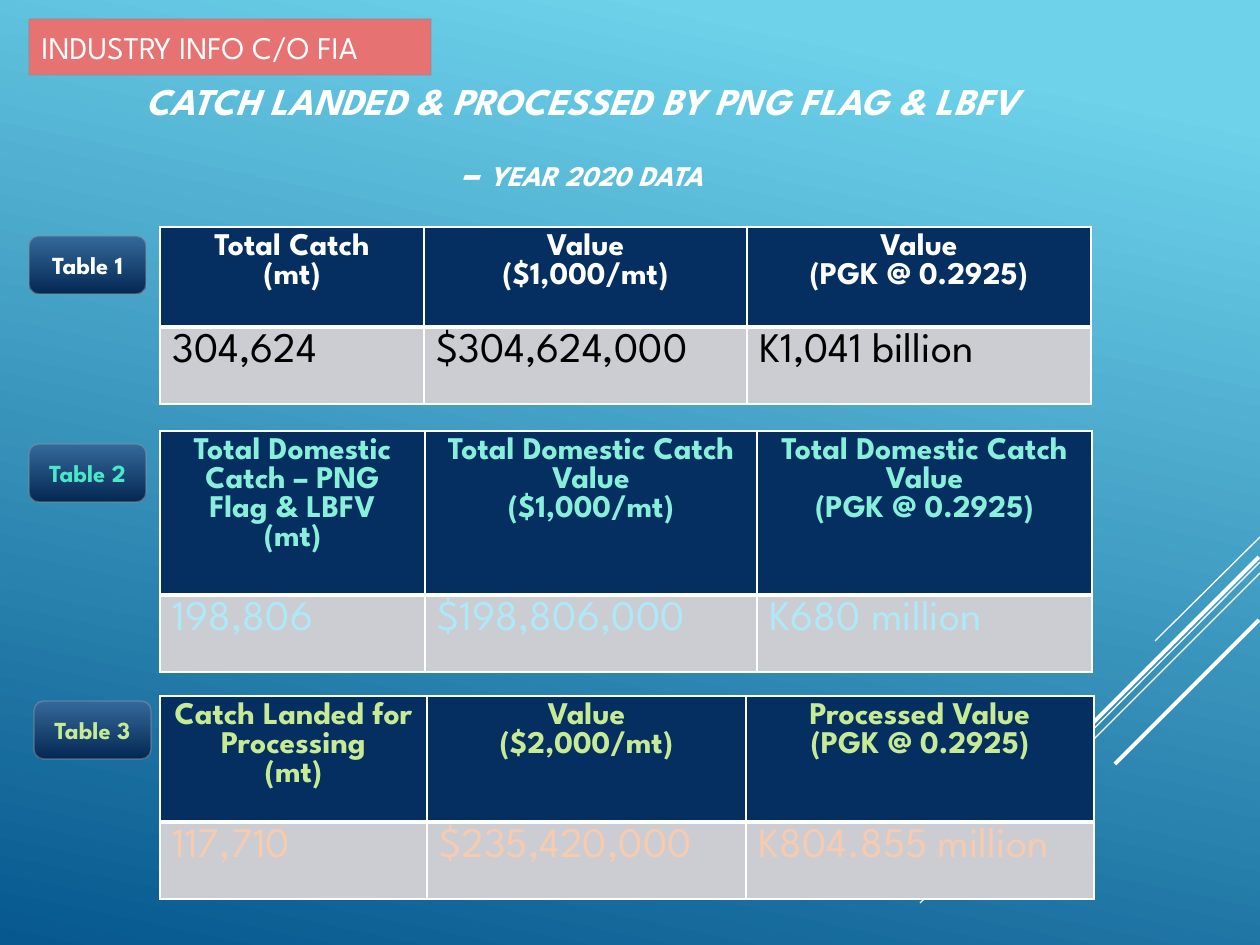
"""Build the slide on catch landed and processed, year 2020."""
from lxml.etree import SubElement
from pptx import Presentation
from pptx.dml.color import RGBColor
from pptx.enum.shapes import MSO_CONNECTOR, MSO_SHAPE
from pptx.enum.text import MSO_ANCHOR, PP_ALIGN
from pptx.oxml.ns import qn
from pptx.util import Emu, Pt

COLORS = {
    "sky": "6ED2EB", "sea": "06588E", "white": "FFFFFF", "black": "000000",
    "navy": "052F61", "grey": "CCCDD2", "coral": "E67272", "edge": "89919C",
    "label_top": "35699B", "label_bottom": "042853", "mint": "87EFDA",
    "teal": "4BE7C8", "ice": "ADE9F8", "lime": "C7EA94", "peach": "F6CBAF",
}
RGB = {name: RGBColor.from_string(value) for name, value in COLORS.items()}
FONT = "League Spartan"


def px(length):
    return Emu(round(length * 914400 / 126))


def write(para, text, size, color, bold=False, italic=False):
    span = para.add_run()
    span.text = text
    span.font.name = FONT
    span.font.size = Pt(size)
    span.font.color.rgb = RGB[color]
    span.font.bold = bold
    span.font.italic = italic


deck = Presentation()
deck.slide_width, deck.slide_height = px(1260), px(945)
page = deck.slides.add_slide(deck.slide_layouts[6])

backdrop = page.background.fill
backdrop.gradient()
backdrop.gradient_angle = 258
for stop, color, position in zip(backdrop.gradient_stops, ("sky", "sea"), (0.1, 1)):
    stop.color.rgb = RGB[color]
    stop.position = position

for x1, y1, x2, y2, weight in [
    (1260, 537, 1155, 641, 0.75),
    (1260, 562, 920, 903, 0.75),
    (1260, 573, 1043, 790, 0.75),
    (1259, 557, 1061, 755, 2.25),
    (1259, 620, 1115, 764, 2.25),
]:
    streak = page.shapes.add_connector(
        MSO_CONNECTOR.STRAIGHT, px(x1), px(y1), px(x2), px(y2))
    streak.line.color.rgb = RGB["white"]
    streak.line.width = Pt(weight)
    SubElement(streak._element.spPr, qn("a:effectLst"))

title = page.shapes.add_textbox(px(34), px(73), px(1096), px(110)).text_frame
title.word_wrap = True
title.vertical_anchor = MSO_ANCHOR.MIDDLE
para = title.paragraphs[0]
para.alignment = PP_ALIGN.CENTER
para.line_spacing = 1.36
write(para, "CATCH LANDED & PROCESSED BY PNG FLAG & LBFV", 21.6, "white", True, True)
para.add_line_break()
write(para, "–", 21.6, "white", True, True)
write(para, " ", 25.2, "white", True, True)
write(para, "YEAR 2020 DATA", 16.2, "white", True, True)

tables = [
    (227, (264, 323, 344), (100, 77), "white", "black",
     [("Total Catch", "(mt)"), ("Value", "($1,000/mt)"), ("Value", "(PGK @ 0.2925)")],
     ["304,624", "$304,624,000", "K1,041 billion"]),
    (431, (265, 332, 335), (128, 77), "mint", "ice",
     [("Total Domestic Catch – PNG Flag & LBFV", "(mt)"),
      ("Total Domestic Catch Value", "($1,000/mt)"),
      ("Total Domestic Catch Value", "(PGK @ 0.2925)")],
     ["198,806", "$198,806,000", "K680 million"]),
    (696, (267, 319, 348), (100, 77), "lime", "peach",
     [("Catch Landed for Processing", "(mt)"), ("Value", "($2,000/mt)"),
      ("Processed Value", "(PGK @ 0.2925)")],
     ["117,710", "$235,420,000", "K804.855 million"]),
]
for top, widths, heights, head_color, body_color, heads, values in tables:
    grid = page.shapes.add_table(
        2, 3, px(160), px(top), px(sum(widths)), px(sum(heights))).table
    for row, height in zip(grid.rows, heights):
        row.height = px(height)
    for index, width in enumerate(widths):
        grid.columns[index].width = px(width)
        head, body = grid.cell(0, index), grid.cell(1, index)
        for number, text in enumerate(heads[index]):
            frame = head.text_frame
            para = frame.add_paragraph() if number else frame.paragraphs[0]
            para.alignment = PP_ALIGN.CENTER
            write(para, text, 18, head_color, bold=True)
        write(body.text_frame.paragraphs[0], values[index], 24, body_color)
        for cell, fill, thick in ((head, "navy", "lnB"), (body, "grey", "lnT")):
            properties = cell._tc.get_or_add_tcPr()
            for side in ("lnL", "lnR", "lnT", "lnB"):
                weight = Pt(3 if side == thick else 1)
                border = SubElement(properties, qn(f"a:{side}"), w=str(weight))
                solid = SubElement(border, qn("a:solidFill"))
                SubElement(solid, qn("a:srgbClr"), val=COLORS["white"])
            cell.fill.solid()
            cell.fill.fore_color.rgb = RGB[fill]

for kind, left, top, width, height, text, size, color in [
    (MSO_SHAPE.ROUNDED_RECTANGLE, 29, 236, 117, 58, "Table 1", 14, "white"),
    (MSO_SHAPE.ROUNDED_RECTANGLE, 34, 701, 117, 58, "Table 3", 14, "lime"),
    (MSO_SHAPE.ROUNDED_RECTANGLE, 29, 444, 117, 58, "Table 2", 14, "teal"),
    (MSO_SHAPE.RECTANGLE, 29, 19, 402, 56, "INDUSTRY INFO C/O FIA", 18, "white"),
]:
    label = kind == MSO_SHAPE.ROUNDED_RECTANGLE
    box = page.shapes.add_shape(kind, px(left), px(top), px(width), px(height))
    box.shadow.inherit = False
    if label:
        box.fill.gradient()
        box.fill.gradient_angle = 270
        for stop, shade, position in zip(
                box.fill.gradient_stops, ("label_top", "label_bottom"), (0, 1)):
            stop.color.rgb = RGB[shade]
            stop.position = position
    else:
        box.fill.solid()
        box.fill.fore_color.rgb = RGB["coral"]
    box.line.color.rgb = RGB["edge"]
    box.line.width = Pt(0.75)
    edge = box.line._ln.find(".//" + qn("a:srgbClr"))
    SubElement(edge, qn("a:alpha"), val="60000")
    box.text_frame.word_wrap = True
    box.text_frame.vertical_anchor = MSO_ANCHOR.MIDDLE
    para = box.text_frame.paragraphs[0]
    para.alignment = PP_ALIGN.CENTER if label else PP_ALIGN.LEFT
    write(para, text, size, color, bold=label)

deck.save("out.pptx")
